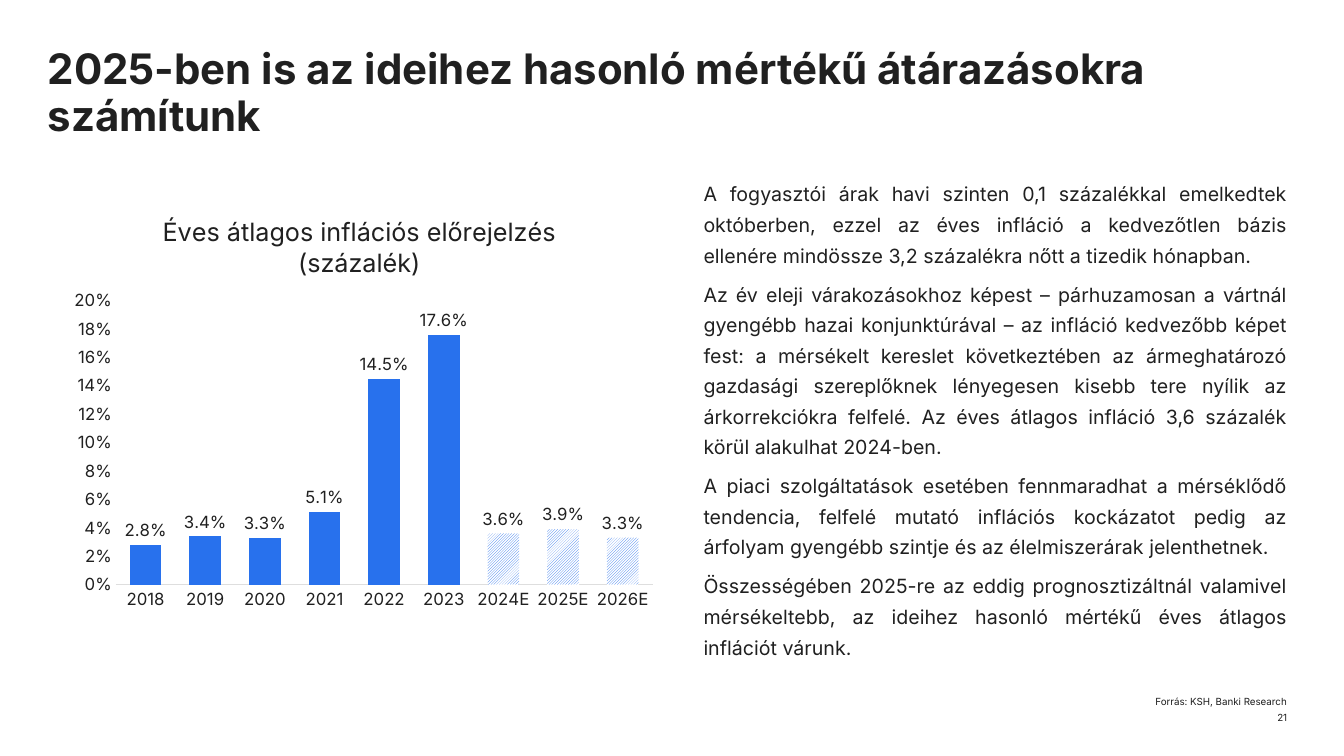
from lxml.etree import SubElement
from pptx import Presentation
from pptx.chart.data import CategoryChartData
from pptx.dml.color import RGBColor
from pptx.enum.chart import XL_CHART_TYPE, XL_LABEL_POSITION, XL_TICK_MARK
from pptx.enum.dml import MSO_PATTERN
from pptx.enum.text import MSO_ANCHOR, MSO_AUTO_SIZE, PP_ALIGN
from pptx.oxml.ns import qn
from pptx.util import Cm, Pt

TITLE = "2025-ben is az ideihez hasonló mértékű átárazásokra számítunk"
BODY = [
    "A fogyasztói árak havi szinten 0,1 százalékkal emelkedtek októberben, ezzel az éves "
    "infláció a kedvezőtlen bázis ellenére mindössze 3,2 százalékra nőtt a tizedik hónapban.",
    "Az év eleji várakozásokhoz képest – párhuzamosan a vártnál gyengébb hazai "
    "konjunktúrával – az infláció kedvezőbb képet fest: a mérsékelt kereslet következtében "
    "az ármeghatározó gazdasági szereplőknek lényegesen kisebb tere nyílik az "
    "árkorrekciókra felfelé. Az éves átlagos infláció 3,6 százalék körül alakulhat 2024-ben.",
    "A piaci szolgáltatások esetében fennmaradhat a mérséklődő tendencia, felfelé mutató "
    "inflációs kockázatot pedig az árfolyam gyengébb szintje és az élelmiszerárak jelenthetnek.",
    "Összességében 2025-re az eddig prognosztizáltnál valamivel mérsékeltebb, az ideihez "
    "hasonló mértékű éves átlagos inflációt várunk.",
]
CHART_TITLE = "Éves átlagos inflációs előrejelzés (százalék)"
INFLATION = {
    "2018": 0.028, "2019": 0.034, "2020": 0.033, "2021": 0.051, "2022": 0.145,
    "2023": 0.176, "2024E": 0.036, "2025E": 0.039, "2026E": 0.033,
}


def rgb(value):
    return RGBColor.from_string(value)


def apply(target, values):
    for name, value in values.items():
        setattr(target, name, value)


def set_layout(parent, index, **fractions):
    """Place a chart part by fractions of the chart area."""
    layout = parent.find(qn("c:layout"))
    if layout is None:
        layout = parent.makeelement(qn("c:layout"))
        parent.insert(index, layout)
    manual = SubElement(layout, qn("c:manualLayout"))
    if "w" in fractions:
        SubElement(manual, qn("c:layoutTarget"), val="inner")
    for mode in ("xMode", "yMode"):
        SubElement(manual, qn(f"c:{mode}"), val="edge")
    for name, value in fractions.items():
        SubElement(manual, qn(f"c:{name}"), val=str(value))


class Deck:
    font = "Inter"
    ink = "202020"
    blue = "2871ED"
    white = "FFFFFF"
    grey = "DEDEDE"

    def __init__(self, width, height):
        self.prs = Presentation()
        apply(self.prs, {"slide_width": Cm(width), "slide_height": Cm(height)})

    def add_slide(self):
        self.slide = self.prs.slides.add_slide(self.prs.slide_layouts[5])

    def style(self, font, size, bold=False):
        apply(font, {"name": self.font, "size": Pt(size), "bold": bold})
        font.color.rgb = rgb(self.ink)

    def fill_text(self, sp, paragraphs, size, bold=False, anchor=MSO_ANCHOR.TOP, **spacing):
        tf = sp.text_frame
        apply(tf, {"word_wrap": True, "auto_size": MSO_AUTO_SIZE.NONE,
                   "vertical_anchor": anchor, "margin_left": 0, "margin_top": 0,
                   "margin_right": 0, "margin_bottom": 0})
        for i, text in enumerate(paragraphs):
            p = tf.add_paragraph() if i else tf.paragraphs[0]
            apply(p, spacing)
            r = p.add_run()
            r.text = text
            self.style(r.font, size, bold)

    def title(self, box, text):
        sp = self.slide.shapes.title
        apply(sp, dict(zip(("left", "top", "width", "height"), map(Cm, box))))
        self.fill_text(sp, [text], 30, bold=True, alignment=PP_ALIGN.LEFT, line_spacing=0.92)

    def text(self, box, paragraphs, size, **options):
        sp = self.slide.shapes.add_textbox(*map(Cm, box))
        self.fill_text(sp, paragraphs, size, **options)

    def column_chart(self, box, title, values):
        data = CategoryChartData(number_format="0.0%")
        data.categories = list(values)
        data.add_series("Series 1", list(values.values()))
        chart = self.slide.shapes.add_chart(
            XL_CHART_TYPE.COLUMN_CLUSTERED, *map(Cm, box), data).chart
        self.style(chart.font, 10)
        chart.has_legend = False

        heading = chart.chart_title
        r = heading.text_frame.paragraphs[0].add_run()
        r.text = title
        self.style(r.font, 18)

        plot = chart.plots[0]
        apply(plot, {"gap_width": 89, "overlap": -27, "vary_by_categories": False,
                     "has_data_labels": True})
        labels = plot.data_labels
        apply(labels, {"show_value": True, "number_format": "0.0%",
                       "number_format_is_linked": False,
                       "position": XL_LABEL_POSITION.OUTSIDE_END})
        self.style(labels.font, 12)

        for axis in (chart.category_axis, chart.value_axis):
            apply(axis, {"has_major_gridlines": False,
                         "major_tick_mark": XL_TICK_MARK.NONE,
                         "minor_tick_mark": XL_TICK_MARK.NONE})
            self.style(axis.tick_labels.font, 12)
        line = chart.category_axis.format.line
        line.color.rgb = rgb(self.grey)
        line.width = Pt(0.75)
        apply(chart.value_axis, {"minimum_scale": 0, "maximum_scale": 0.2, "major_unit": 0.02})
        apply(chart.value_axis.tick_labels,
              {"number_format": "0%", "number_format_is_linked": False})
        chart.value_axis.format.line.fill.background()

        series = plot.series[0]
        series.format.fill.solid()
        series.format.fill.fore_color.rgb = rgb(self.blue)
        for i, year in enumerate(values):
            if year.endswith("E"):
                fill = series.points[i].format.fill
                fill.patterned()
                fill.pattern = MSO_PATTERN.DARK_UPWARD_DIAGONAL
                fill.fore_color.rgb = rgb(self.blue)
                fill.back_color.rgb = rgb(self.white)

        plot_area = chart.plots[0]._element.getparent()
        set_layout(plot_area, 0, x=0.09, y=0.26, w=0.89, h=0.66)
        set_layout(plot_area.getparent().find(qn("c:title")), 1, x=0.16, y=0.05)


def main():
    deck = Deck(33.87, 19.05)
    deck.add_slide()
    deck.title((1.2, 1.2, 31.52, 2.1), TITLE)
    deck.column_chart((1.55, 4.75, 15.2, 10.85), CHART_TITLE, INFLATION)
    deck.text((17.73, 4.42, 14.71, 12.17), BODY, 14, alignment=PP_ALIGN.JUSTIFY,
              line_spacing=1.3, space_after=Pt(6))
    deck.text((17.23, 17.25, 15.2, 0.58), ["Forrás: KSH, Banki Research"], 7,
              anchor=MSO_ANCHOR.BOTTOM, alignment=PP_ALIGN.RIGHT, line_spacing=1.07)
    deck.text((31.4, 17.93, 1.04, 0.36), ["21"], 7, alignment=PP_ALIGN.RIGHT)
    deck.prs.save("out.pptx")


if __name__ == "__main__":
    main()
